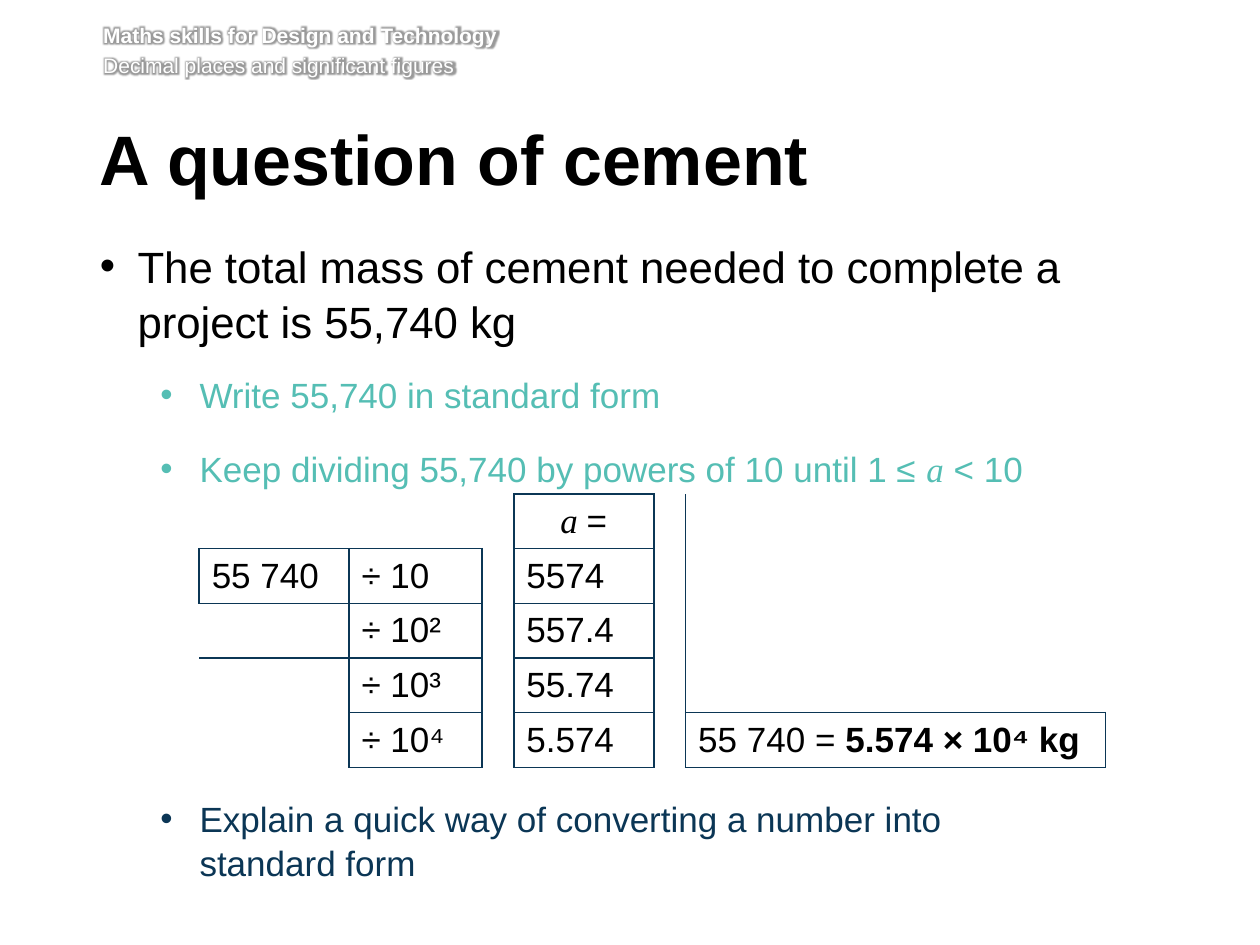
from pptx import Presentation
from pptx.dml.color import RGBColor
from pptx.enum.text import MSO_ANCHOR, PP_ALIGN
from pptx.oxml import parse_xml
from pptx.oxml.ns import nsdecls, qn
from pptx.util import Pt

BLACK = RGBColor(0, 0, 0)
WHITE = RGBColor(255, 255, 255)
TEAL = RGBColor(0x55, 0xBE, 0xB4)
NAVY = RGBColor(0x0B, 0x36, 0x55)
SANS = "Arial"
SERIF = "Times New Roman"
PLAIN = "{2D5ABB26-0587-4C30-8999-92F81FD0307C}"


def write(para, text, size=20, color=BLACK, font=SANS, bold=False, italic=False):
    run = para.add_run()
    run.text = text
    face = run.font
    face.size, face.name, face.bold, face.italic = Pt(size), font, bold, italic
    face.color.rgb = color
    return run


def frame(shape, top=0, left=0):
    body = shape.text_frame
    body.word_wrap = True
    body.vertical_anchor = MSO_ANCHOR.TOP
    body.margin_left, body.margin_top = Pt(left), Pt(top)
    body.margin_right, body.margin_bottom = Pt(7.2), Pt(3.6)
    return body


def bullet(para, left, hang, color, after=12, before=0):
    props = para._p.get_or_add_pPr()
    props.set("marL", str(Pt(left)))
    props.set("indent", str(-Pt(hang)))
    for tag in (f'buClr {nsdecls("a")}><a:srgbClr val="{color}"/></a:buClr',
                f'buFont {nsdecls("a")} typeface="{SANS}"/',
                f'buChar {nsdecls("a")} char="•"/'):
        props.append(parse_xml(f"<a:{tag}>"))
    para.line_spacing = 1.05
    para.space_before, para.space_after = Pt(before), Pt(after)


def glow(run):
    fill = run._r.rPr.find(qn("a:solidFill"))
    fill.addnext(parse_xml(
        f'<a:effectLst {nsdecls("a")}><a:glow rad="{Pt(5)}"><a:srgbClr val="000000">'
        '<a:alpha val="40000"/></a:srgbClr></a:glow></a:effectLst>'))


def header(slide, *box):
    body = frame(slide.shapes.add_textbox(*map(Pt, box)))
    first, second = body.paragraphs[0], body.add_paragraph()
    glow(write(first, "Maths skills for Design and Technology", 12, WHITE, bold=True))
    glow(write(second, "Decimal places and significant figures", 12, WHITE))
    second.space_before = Pt(2.9)


def title(slide, *box):
    shape = slide.shapes.title
    shape.left, shape.top, shape.width, shape.height = map(Pt, box)
    para = frame(shape, top=3.6).paragraphs[0]
    para.alignment = PP_ALIGN.LEFT
    para.line_spacing = Pt(39)
    write(para, "A question of cement", 40, bold=True)


def steps(slide, *box):
    body = frame(slide.shapes.add_textbox(*map(Pt, box)))
    para = body.paragraphs[0]
    bullet(para, 21.6, 21.6, BLACK, after=14)
    write(para, "The total mass of cement needed to complete a project is 55,740 kg", 25)
    para = body.add_paragraph()
    bullet(para, 57, 22.3, TEAL)
    write(para, "Write 55,740 in standard form", color=TEAL)
    para = body.add_paragraph()
    bullet(para, 57, 22.3, TEAL, before=5)
    write(para, "Keep dividing 55,740 by powers of 10 until 1 ≤ ", color=TEAL)
    write(para, "a", color=TEAL, font=SERIF, italic=True)
    write(para, " < 10", color=TEAL)


def prompt(slide, *box):
    para = frame(slide.shapes.add_textbox(*map(Pt, box))).paragraphs[0]
    bullet(para, 57, 22.3, NAVY)
    write(para, "Explain a quick way of converting a number into ", color=NAVY)
    para.add_line_break()
    write(para, "standard form", color=NAVY)


def edge(cell, side):
    cell._tc.get_or_add_tcPr().append(parse_xml(
        f'<a:ln{side} {nsdecls("a")} w="{Pt(1)}"><a:solidFill>'
        f'<a:srgbClr val="{NAVY}"/></a:solidFill></a:ln{side}>'))


def working(slide, left, top, width, height):
    powers = ["÷ 10", "÷ 10²", "÷ 10³", "÷ 10⁴"]
    values = ["5574", "557.4", "55.74", "5.574"]
    cells = {(1, 0): [("55 740", {})],
             (0, 3): [("a ", {"font": SERIF, "italic": True}), ("=", {})],
             (4, 5): [("55 740 = ", {}), ("5.574 × 10⁴ kg", {"bold": True})]}
    for row, (power, value) in enumerate(zip(powers, values), 1):
        cells[row, 1] = [(power, {})]
        cells[row, 3] = [(value, {})]
    widths = [85.6, 76, 18.2, 80, 18.2, 240]
    scale = width / sum(widths)
    table = slide.shapes.add_table(
        5, 6, Pt(left), Pt(top), Pt(width), Pt(height)).table
    table.first_row = table.horz_banding = False
    table._tbl.tblPr.find(qn("a:tableStyleId")).text = PLAIN
    for col, wide in zip(table.columns, widths):
        col.width = Pt(round(wide * scale, 2))
    for line in table.rows:
        line.height = Pt(height / 5)
    near = {"L": (0, -1), "R": (0, 1), "T": (-1, 0), "B": (1, 0)}
    for row in range(5):
        for col in range(6):
            cell = table.cell(row, col)
            cell.vertical_anchor = MSO_ANCHOR.MIDDLE
            for side, (down, over) in near.items():
                if (row, col) in cells or (row + down, col + over) in cells:
                    edge(cell, side)
            cell.fill.background()
            for text, style in cells.get((row, col), []):
                write(cell.text_frame.paragraphs[0], text, **style)
    table.cell(0, 3).text_frame.paragraphs[0].alignment = PP_ALIGN.CENTER


def main():
    deck = Presentation()
    deck.slide_width, deck.slide_height = Pt(720), Pt(540)
    slide = deck.slides.add_slide(deck.slide_layouts[5])
    header(slide, 59, 12.6, 635, 35)
    title(slide, 57, 71.3, 615.6, 52.6)
    steps(slide, 57, 135.5, 614, 145)
    working(slide, 113.8, 282.3, 518, 148)
    prompt(slide, 57, 454.6, 614, 55)
    deck.save("out.pptx")


if __name__ == "__main__":
    main()
